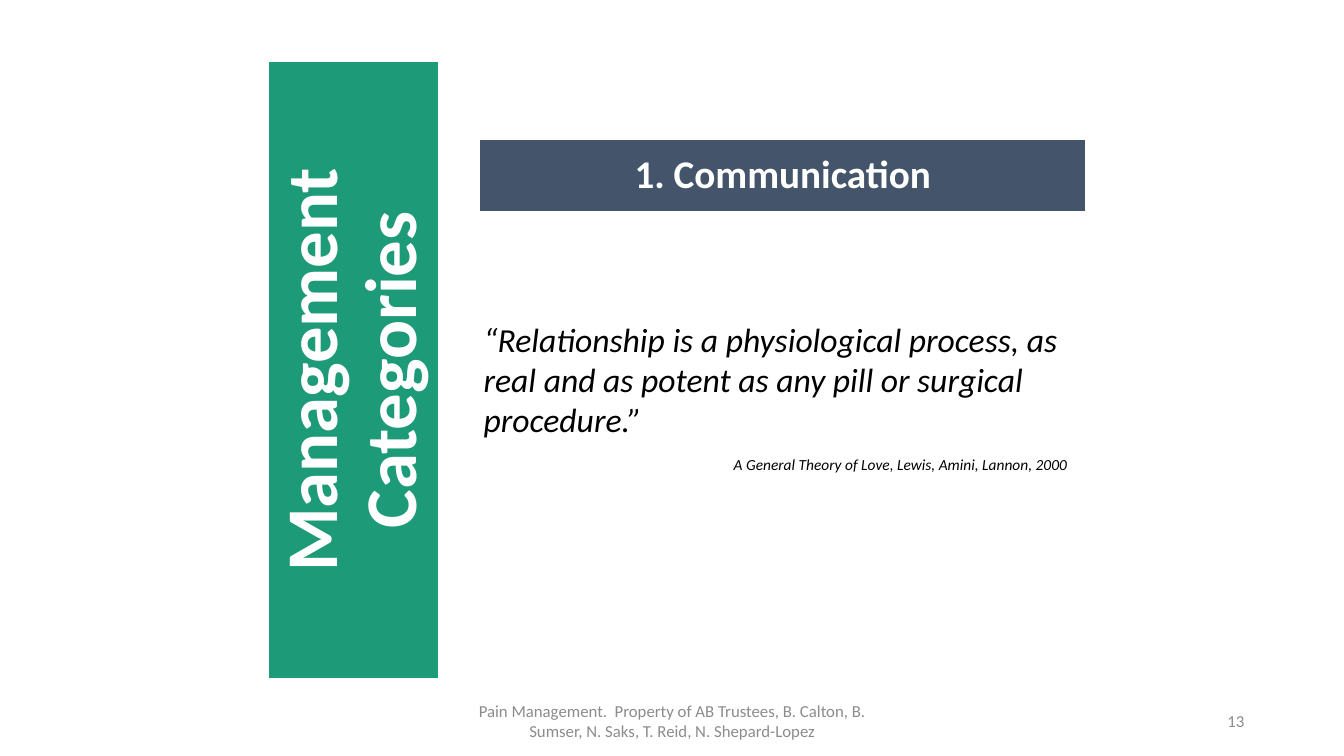
from pptx import Presentation
from pptx import util as u
from pptx.dml.color import RGBColor
from pptx.enum import shapes, text

GREEN = RGBColor(0x1D, 0x9A, 0x78)
SLATE = RGBColor(0x44, 0x54, 0x6A)
WHITE = RGBColor(0xFF, 0xFF, 0xFF)
BLACK = RGBColor(0x00, 0x00, 0x00)
GRAY = RGBColor(0x8C, 0x8C, 0x8C)
FONT = "Calibri"
CENTER = text.PP_ALIGN.CENTER
MIDDLE = text.MSO_ANCHOR.MIDDLE

SLIDE_SIZE = (33.87, 19.05)

# Boxes are left, top, width, height in centimetres
PANEL = ("Management Categories", (1.14, 7.16, 15.54, 4.32))
BANNER = ("1. Communication", (12.09, 3.51, 15.27, 1.83))
NOTES = [
    ("“Relationship is a physiological process, as real and as potent "
     "as any pill or surgical procedure.”",
     (12.19, 8.03, 14.96, 3.94),
     dict(size=24, color=BLACK, italic=True)),
    ("A General Theory of Love, Lewis, Amini, Lannon, 2000",
     (18.49, 11.48, 8.66, 0.48),
     dict(size=11, color=BLACK, italic=True, wrap=False)),
    ("13",
     (30.68, 17.65, 2, 1.02),
     dict(size=12, color=GRAY, anchor=MIDDLE, margins=(0.25, 0.13))),
    ("Pain Management.  Property of AB Trustees, B. Calton, B. Sumser, "
     "N. Saks, T. Reid, N. Shepard-Lopez",
     (11.23, 17.65, 11.43, 1.02),
     dict(size=12, color=GRAY, align=CENTER, anchor=MIDDLE, margins=(0.25, 0.13))),
]


def lengths(box):
    return [u.Cm(value) for value in box]


def write(shape, content, size, color, bold=False, italic=False, wrap=True,
          align=text.PP_ALIGN.LEFT, anchor=text.MSO_ANCHOR.TOP,
          margins=(0, 0), line_spacing=1.0):
    frame = shape.text_frame
    frame.auto_size = text.MSO_AUTO_SIZE.NONE
    frame.word_wrap = wrap
    frame.vertical_anchor = anchor
    frame.margin_left = frame.margin_right = u.Cm(margins[0])
    frame.margin_top = frame.margin_bottom = u.Cm(margins[1])
    paragraph = frame.paragraphs[0]
    paragraph.alignment = align
    paragraph.line_spacing = line_spacing
    run = paragraph.add_run()
    run.text = content
    font = run.font
    font.name, font.size, font.color.rgb = FONT, u.Pt(size), color
    font.bold, font.italic = bold, italic


def write_block(shape, content, fill, size, margin):
    """Paint a white-edged block and centre bold white text in it."""
    shape.fill.solid()
    shape.fill.fore_color.rgb = fill
    shape.line.color.rgb = WHITE
    shape.line.width = u.Pt(1)
    write(shape, content, size=size, color=WHITE, bold=True, align=CENTER,
          anchor=MIDDLE, margins=(margin, margin), line_spacing=0.9)


def main():
    presentation = Presentation()
    presentation.slide_width, presentation.slide_height = lengths(SLIDE_SIZE)
    title_only = presentation.slide_layouts[5]
    slide = presentation.slides.add_slide(title_only)

    content, box = BANNER
    title = slide.shapes.title
    title.left, title.top, title.width, title.height = lengths(box)
    write_block(title, content, SLATE, size=28, margin=0.05)

    content, box = PANEL
    panel = slide.shapes.add_shape(shapes.MSO_SHAPE.RECTANGLE, *lengths(box))
    panel.rotation = 270
    panel.shadow.inherit = False
    write_block(panel, content, GREEN, size=52, margin=0.1)

    for content, box, style in NOTES:
        write(slide.shapes.add_textbox(*lengths(box)), content, **style)

    presentation.save("out.pptx")


if __name__ == "__main__":
    main()
